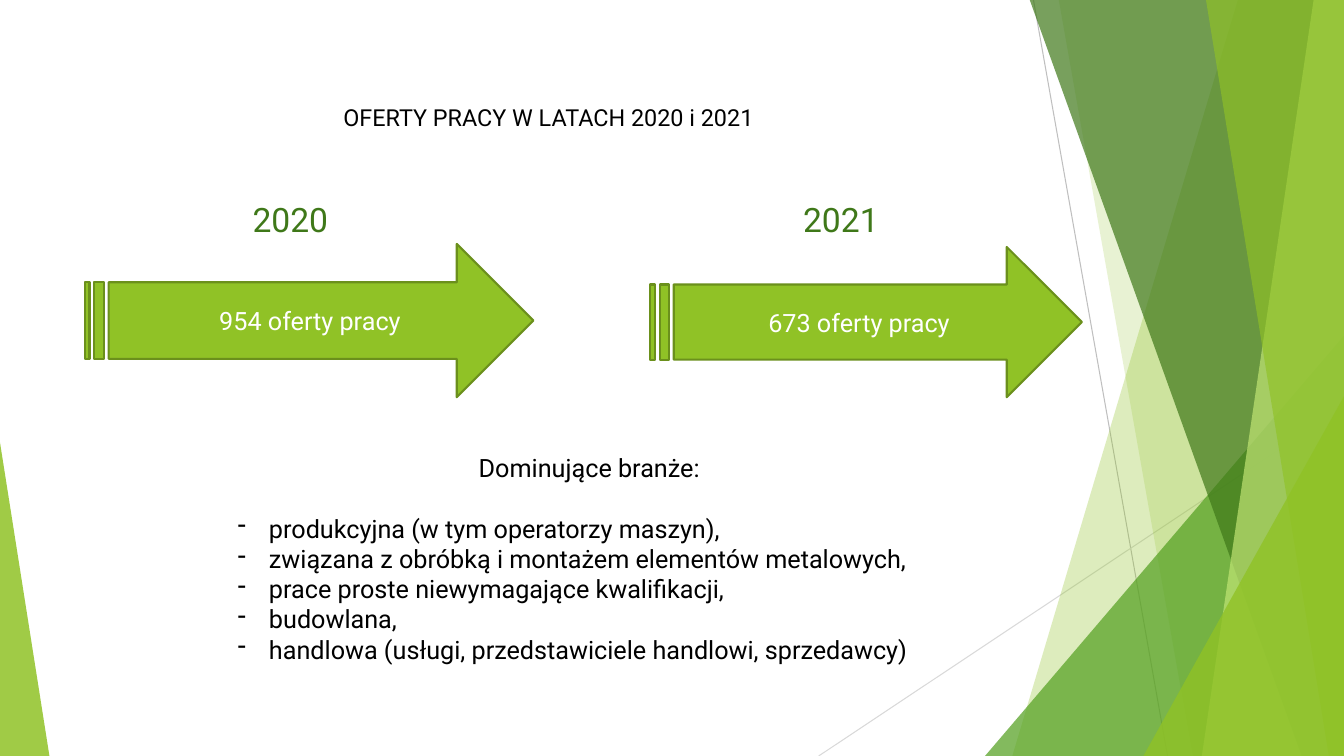
"""Build the slide on job offers in 2020 and 2021."""
import pptx
import pptx.dml.color
import pptx.enum.shapes
import pptx.enum.text
import pptx.oxml.ns
import pptx.util
from lxml import etree

Inches, Pt = pptx.util.Inches, pptx.util.Pt
RGB = pptx.dml.color.RGBColor.from_string
SHAPE = pptx.enum.shapes.MSO_SHAPE
ALIGN = pptx.enum.text.PP_ALIGN
ANCHOR = pptx.enum.text.MSO_ANCHOR
qn = pptx.oxml.ns.qn

WIDTH, HEIGHT, TOP = 13.33, 7.5, -0.01
THEME = {
    "font": "Roboto",
    "lime": "90C226", "green": "54A021", "dark": "3F7819", "pale": "C0E474",
    "outline": "6B901C", "black": "000000", "white": "FFFFFF",
    "rule": "BFBFBF", "faint_rule": "D9D9D9",
    "title": 16.7, "year": 24, "body": 18,
}
INDUSTRIES = [
    "produkcyjna (w tym operatorzy maszyn),",
    "związana z obróbką i montażem elementów metalowych,",
    "prace proste niewymagające kwalifikacji,",
    "budowlana,",
    "handlowa (usługi, przedstawiciele handlowi, sprzedawcy)",
]


def apply(obj, values):
    """Set each attribute of obj named in values."""
    for name, value in values.items():
        setattr(obj, name, value)


def paint(sp, color, opacity=100):
    """Give a shape a plain fill without line or shadow."""
    sp.shadow.inherit = False
    sp.fill.solid()
    sp.fill.fore_color.rgb = RGB(THEME[color])
    sp.line.fill.background()
    if opacity < 100:
        clr = sp.fill._xPr.find(qn("a:solidFill"))[0]
        etree.SubElement(clr, qn("a:alpha"), val=str(opacity * 1000))


def add_rule(s, start, end, color):
    """Draw a thin straight line."""
    cx = s.shapes.add_connector(pptx.enum.shapes.MSO_CONNECTOR.STRAIGHT,
                                *map(Inches, start + end))
    apply(cx.line, {"width": Pt(0.75)})
    cx.line.color.rgb = RGB(THEME[color])
    etree.SubElement(cx._element.spPr, qn("a:effectLst"))


def add_band(s, top_left, bottom_left, color, opacity):
    """Draw a slanted band that reaches the right edge of the slide."""
    points = [(top_left, TOP), (WIDTH, TOP), (WIDTH, HEIGHT), (bottom_left, HEIGHT)]
    points = [(Inches(x), Inches(y)) for x, y in points]
    fb = s.shapes.build_freeform(*points[0])
    fb.add_line_segments(points[1:])
    paint(fb.convert_to_shape(), color, opacity)


def add_triangle(s, box, apex, color, opacity):
    """Draw a triangle with its apex at a fraction of the width."""
    sp = s.shapes.add_shape(SHAPE.ISOSCELES_TRIANGLE, *map(Inches, box))
    sp.adjustments[0] = apex
    paint(sp, color, opacity)


def write(p, text, size, color, **formats):
    """Put one styled run into a paragraph."""
    apply(p, formats)
    r = p.add_run()
    r.text = text
    apply(r.font, {"name": THEME["font"], "size": Pt(THEME[size])})
    r.font.color.rgb = RGB(THEME[color])


def add_label(s, box, text, size, color, anchor, fill=None, inset=0.1):
    """Add a one-line centred text box and return it."""
    sp = s.shapes.add_textbox(*map(Inches, box))
    if fill:
        paint(sp, fill)
    tf = sp.text_frame
    apply(tf, {"word_wrap": True, "vertical_anchor": anchor, "margin_right": Inches(inset)})
    write(tf.paragraphs[0], text, size, color, alignment=ALIGN.CENTER)
    return sp


def add_arrow(s, box, text, inset=0.1):
    """Add a striped arrow with a centred caption."""
    sp = s.shapes.add_shape(SHAPE.STRIPED_RIGHT_ARROW, *map(Inches, box))
    paint(sp, "lime")
    sp.line.color.rgb = RGB(THEME["outline"])
    sp.line.width = Pt(1.5)
    tf = sp.text_frame
    apply(tf, {"word_wrap": True, "vertical_anchor": ANCHOR.MIDDLE, "margin_left": Inches(inset)})
    write(tf.paragraphs[0], text, "body", "white", alignment=ALIGN.CENTER)


def add_bullets(s, box, heading, items):
    """Add a centred heading followed by a dashed list."""
    sp = add_label(s, box, heading, "body", "black", ANCHOR.TOP)
    tf = sp.text_frame
    tf.paragraphs[0].space_after = Pt(21.5)
    for item in items:
        p = tf.add_paragraph()
        write(p, item, "body", "black", alignment=ALIGN.LEFT)
        pPr = p._p.get_or_add_pPr()
        indent = Inches(0.31)
        pPr.set("marL", str(indent))
        pPr.set("indent", str(-indent))
        etree.SubElement(pPr, qn("a:buChar"), char="-")


def add_backdrop(s):
    """Draw the green facets and thin rules behind the content."""
    add_rule(s, (10.25, 0), (11.58, HEIGHT), "rule")
    add_rule(s, (WIDTH, 4.03), (8.12, HEIGHT), "faint_rule")
    add_band(s, 12.28, 10.04, "lime", 30)
    add_band(s, 10.5, 11.83, "lime", 20)
    add_triangle(s, (9.77, 3.33, 3.56, 4.17), 1, "green", 72)
    add_band(s, 10.21, 12.91, "dark", 70)
    add_band(s, 13.03, 11.92, "pale", 70)
    add_band(s, 11.96, 13.18, "lime", 65)
    add_triangle(s, (11.34, 3.93, 1.99, 3.57), 1, "lime", 80)
    add_triangle(s, (0, 4.39, 0.49, 3.11), 0, "lime", 85)


def main():
    """Build and save the slide."""
    prs = pptx.Presentation()
    apply(prs, {"slide_width": Inches(WIDTH), "slide_height": Inches(HEIGHT)})
    s = prs.slides.add_slide(prs.slide_layouts[6])
    add_backdrop(s)
    add_label(s, (0.74, 0.67, 9.4, 0.98), "OFERTY PRACY W LATACH 2020 i 2021",
              "title", "black", ANCHOR.MIDDLE, "white")
    add_label(s, (0.72, 1.79, 4.58, 0.63), "2020", "year", "dark", ANCHOR.BOTTOM, "white", 0.36)
    add_label(s, (6.05, 1.79, 4.58, 0.63), "2021", "year", "dark", ANCHOR.BOTTOM)
    add_arrow(s, (6.45, 2.45, 4.28, 1.49), "673 oferty pracy")
    add_arrow(s, (0.84, 2.42, 4.45, 1.52), "954 oferty pracy", 0.26)
    add_bullets(s, (2.26, 4.44, 7.17, 2.52), "Dominujące branże:", INDUSTRIES)
    prs.save("out.pptx")


if __name__ == "__main__":
    main()
